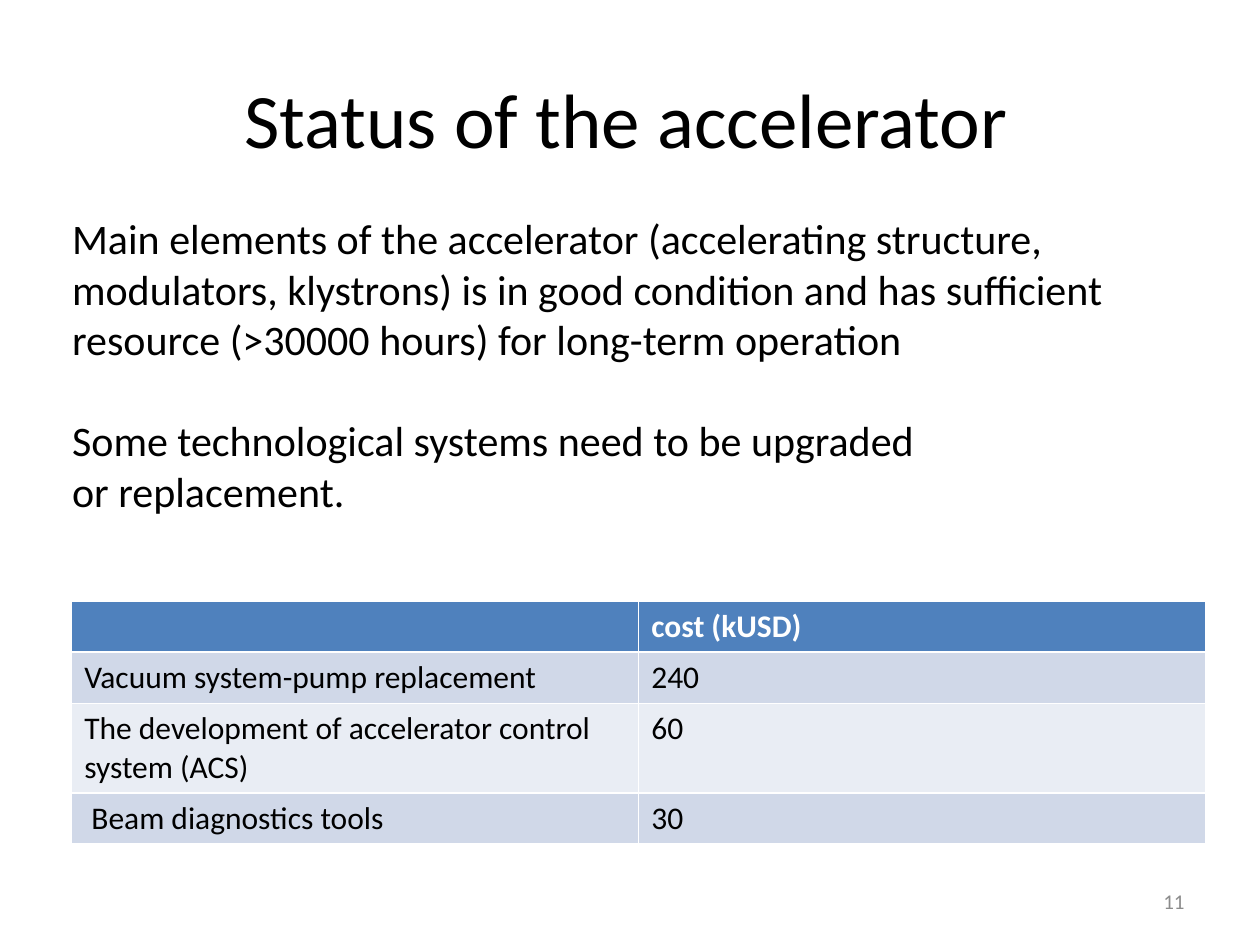
from pptx import Presentation
from pptx.dml.color import RGBColor
from pptx.enum.text import MSO_ANCHOR, MSO_AUTO_SIZE, PP_ALIGN
from pptx.oxml.ns import qn
from pptx.util import Pt

CENTER, RIGHT = PP_ALIGN.CENTER, PP_ALIGN.RIGHT
MIDDLE = MSO_ANCHOR.MIDDLE
NO_AUTOFIT = MSO_AUTO_SIZE.NONE

FONT = "Calibri"
COLORS = {
    "text": "000000",
    "header_text": "FFFFFF",
    "header": "4F81BD",
    "odd_row": "D0D8E8",
    "even_row": "E9EDF4",
    "page_number": "8C8C8C",
}

STATUS = [
    "Main elements of the accelerator (accelerating structure,\v"
    "modulators, klystrons) is in good condition and has sufficient\v"
    "resource (>30000 hours) for long-term operation",
    "Some technological systems need to be upgraded\vor replacement.",
]
COSTS = [
    ("", "cost (kUSD)"),
    ("Vacuum system-pump replacement", "240"),
    ("The development of accelerator control system (ACS)", "60"),
    (" Beam diagnostics tools", "30"),
]


def color(name):
    return RGBColor.from_string(COLORS[name])


def place(shape, left, top, width, height):
    shape.left, shape.top = Pt(left), Pt(top)
    shape.width, shape.height = Pt(width), Pt(height)


def style(paragraph, size, color_name="text", bold=False):
    font = paragraph.font
    font.name, font.size, font.bold = FONT, Pt(size), bold
    font.color.rgb = color(color_name)


def add_heading(slide, box):
    heading = slide.shapes.title
    place(heading, *box)
    frame = heading.text_frame
    frame.text = "Status of the accelerator"
    frame.vertical_anchor = MIDDLE
    frame.paragraphs[0].alignment = CENTER
    style(frame.paragraphs[0], 44)


def add_status(slide, box):
    status = slide.placeholders[1]
    place(status, *box)
    frame = status.text_frame
    frame.text = "\n".join(STATUS)
    frame.word_wrap = False
    frame.auto_size = NO_AUTOFIT
    for index, paragraph in enumerate(frame.paragraphs):
        paragraph.space_before = Pt(29 if index else 0)
        properties = paragraph._p.get_or_add_pPr()
        properties.set("marL", "0")
        properties.set("indent", "0")
        properties.append(properties.makeelement(qn("a:buNone"), {}))
        style(paragraph, 24)


def add_costs(slide, box):
    left, top, width, height = map(Pt, box)
    costs = slide.shapes.add_table(len(COSTS), 2, left, top, width, height).table
    for row_index, entries in enumerate(COSTS):
        is_header = row_index == 0
        fill_name = "header" if is_header else ("even_row", "odd_row")[row_index % 2]
        for column_index, entry in enumerate(entries):
            cell = costs.cell(row_index, column_index)
            cell.text = entry
            cell.fill.solid()
            cell.fill.fore_color.rgb = color(fill_name)
            style(cell.text_frame.paragraphs[0], 18,
                  "header_text" if is_header else "text", is_header)


def add_page_number(slide, box):
    frame = slide.shapes.add_textbox(*map(Pt, box)).text_frame
    frame.text = "11"
    frame.word_wrap = True
    frame.vertical_anchor = MIDDLE
    frame.paragraphs[0].alignment = RIGHT
    style(frame.paragraphs[0], 12, "page_number")


def main():
    presentation = Presentation()
    presentation.slide_width, presentation.slide_height = Pt(720), Pt(540)
    slide = presentation.slides.add_slide(presentation.slide_layouts[1])
    add_heading(slide, (34, 22.5, 648, 90))
    add_costs(slide, (41, 343.5, 648, 116.8))
    add_status(slide, (34, 118, 619, 181.5))
    add_page_number(slide, (516, 500.5, 168, 28.75))
    presentation.save("out.pptx")


if __name__ == "__main__":
    main()
